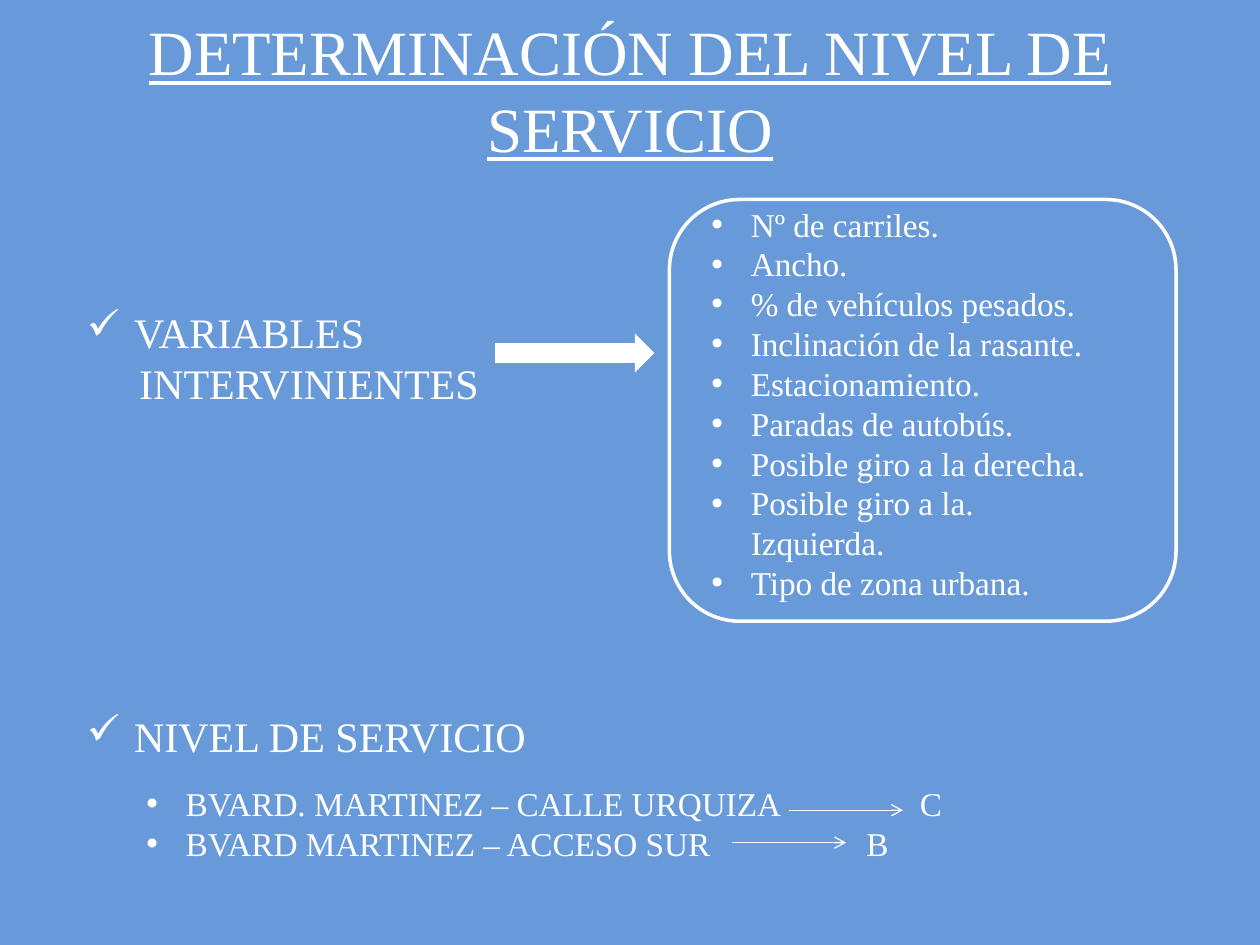
from lxml import etree
from pptx import Presentation
from pptx import util as u
from pptx.dml.color import RGBColor
from pptx.enum import shapes, text
from pptx.oxml.ns import qn

COLORS = {"sky": "689ADA", "ink": "FFFFFF"}
VARIABLES = [
    "Nº de carriles.",
    "Ancho.",
    "% de vehículos pesados.",
    "Inclinación de la rasante.",
    "Estacionamiento.",
    "Paradas de autobús.",
    "Posible giro a la derecha.",
    "Posible giro a la. Izquierda.",
    "Tipo de zona urbana.",
]
ROADS = [
    ("BVARD. MARTINEZ – CALLE URQUIZA", "C", 518.5, 451, 463),
    ("BVARD MARTINEZ – ACCESO SUR", "B", 488, 418.5, 481.5),
]
LINE_HEIGHT = 22.75


def rgb(name):
    return RGBColor.from_string(COLORS[name])


def write(paragraph, content, size=19, leading=LINE_HEIGHT, bullet=None,
          margin=0, indent=0, align=text.PP_ALIGN.LEFT, underline=None):
    properties = paragraph._p.get_or_add_pPr()
    properties.set("marL", str(u.Pt(margin)))
    properties.set("indent", str(u.Pt(indent)))
    if bullet:
        if bullet == "•":
            etree.SubElement(properties, qn("a:buFont")).set("typeface", "Arial")
        etree.SubElement(properties, qn("a:buChar")).set("char", bullet)
    paragraph.alignment = align
    paragraph.line_spacing = u.Pt(leading)
    run = paragraph.add_run()
    run.text = content
    run.font.name = "Times New Roman"
    run.font.size = u.Pt(size)
    run.font.underline = underline
    run.font.color.rgb = rgb("ink")


class Board:
    def __init__(self, slide):
        self.slide = slide
        self.slide.background.fill.solid()
        self.slide.background.fill.fore_color.rgb = rgb("sky")

    def box(self, left, top, width, height, lines):
        frame = self.slide.shapes.add_textbox(
            u.Pt(left), u.Pt(top), u.Pt(width), u.Pt(height)).text_frame
        frame.word_wrap = True
        for number, (content, style) in enumerate(lines):
            paragraph = frame.add_paragraph() if number else frame.paragraphs[0]
            write(paragraph, content, **style)

    def shape(self, kind, left, top, width, height, fill=None, line=None):
        item = self.slide.shapes.add_shape(
            kind, u.Pt(left), u.Pt(top), u.Pt(width), u.Pt(height))
        item.shadow.inherit = False
        if fill:
            item.fill.solid()
            item.fill.fore_color.rgb = rgb(fill)
        else:
            item.fill.background()
        if line:
            item.line.color.rgb = rgb("ink")
            item.line.width = u.Pt(line)
        else:
            item.line.fill.background()

    def arrow(self, left, right, y):
        item = self.slide.shapes.add_connector(
            shapes.MSO_CONNECTOR.STRAIGHT, u.Pt(left), u.Pt(y), u.Pt(right), u.Pt(y))
        item.line.color.rgb = rgb("ink")
        item.line.width = u.Pt(0.75)
        etree.SubElement(item.line._get_or_add_ln(), qn("a:tailEnd")).set("type", "arrow")
        etree.SubElement(item._element.spPr, qn("a:effectLst"))


def main():
    deck = Presentation()
    deck.slide_width, deck.slide_height = u.Pt(720), u.Pt(540)
    board = Board(deck.slides.add_slide(deck.slide_layouts[6]))

    title = dict(size=36, leading=43.5, align=text.PP_ALIGN.CENTER, underline=True)
    heading = dict(size=24, leading=29)
    checked = dict(heading, bullet="✓", margin=27, indent=-27)
    item = dict(bullet="•", margin=22.5, indent=-22.5)

    board.box(16, 3.6, 688, 94.5, [("DETERMINACIÓN DEL NIVEL DE SERVICIO", title)])
    board.box(42.5, 171.5, 240, 65, [
        ("VARIABLES", checked),
        ("INTERVINIENTES", dict(heading, margin=30)),
    ])
    board.box(42.5, 402.5, 652, 36, [("NIVEL DE SERVICIO", checked)])
    board.shape(shapes.MSO_SHAPE.RIGHT_ARROW, 283, 190.5, 91, 22.5, fill="ink")
    board.shape(shapes.MSO_SHAPE.FLOWCHART_ALTERNATE_PROCESS,
                382.5, 114, 289.5, 241, line=2)
    board.box(399.5, 113, 232.5, 259, [(name, item) for name in VARIABLES])

    top = 444
    board.box(76.5, top, 400, 53, [(road[0], item) for road in ROADS])
    for row, (_, level, level_left, arrow_left, arrow_y) in enumerate(ROADS):
        board.box(level_left, top + row * LINE_HEIGHT, 40, 30, [(level, {})])
        board.arrow(arrow_left, arrow_left + 65, arrow_y)

    deck.save("out.pptx")


if __name__ == "__main__":
    main()
